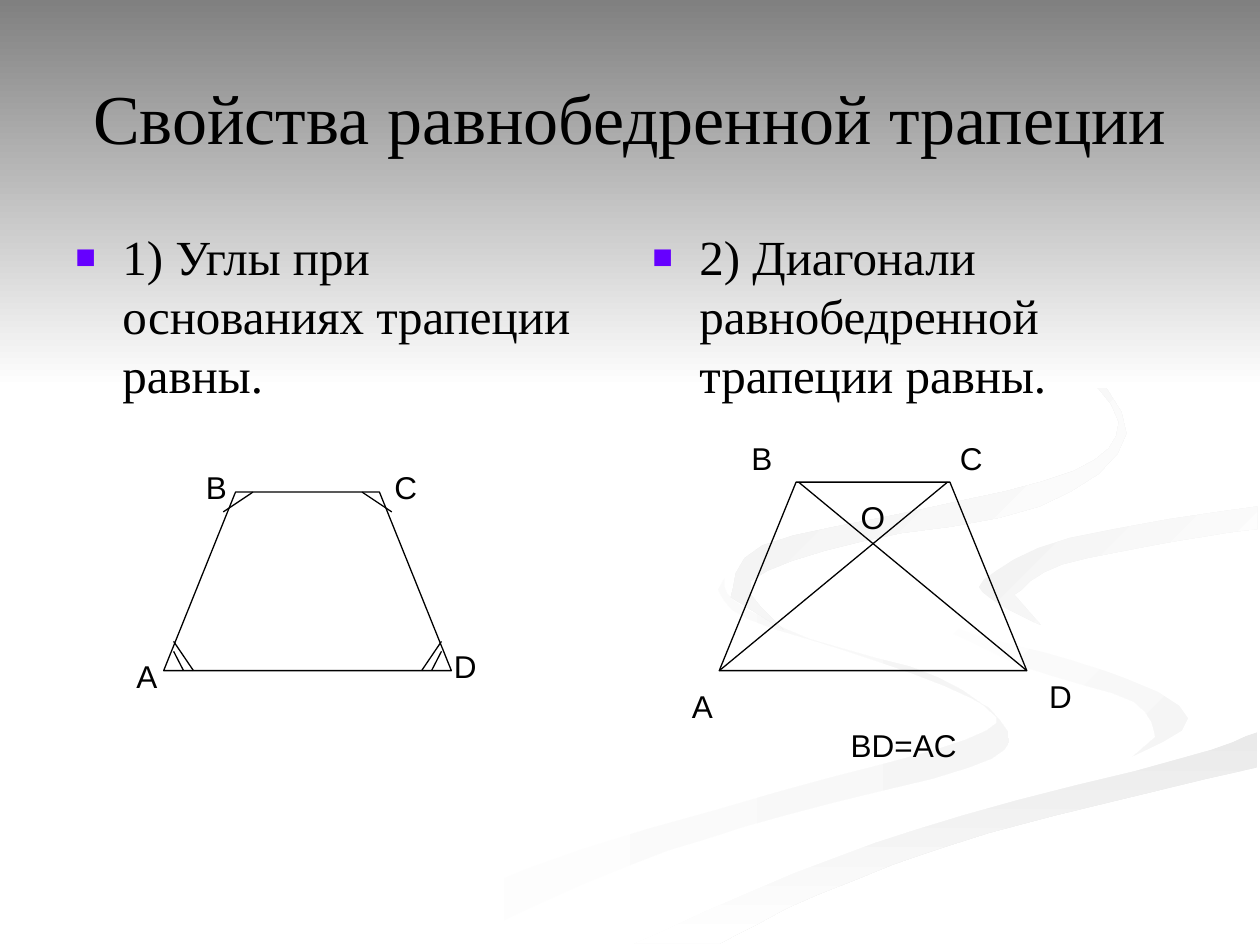
from lxml import etree
from pptx import Presentation
from pptx import util as u
from pptx.dml.color import RGBColor
from pptx.enum import shapes, text
from pptx.oxml.ns import qn

Cm, Pt = u.Cm, u.Pt
HUES = {"ink": "000000", "white": "FFFFFF", "mark": "6600FF", "top": "808080",
        "pale": "F5F5F5", "mist": "EAEAEA", "fog": "F1F1F1", "haze": "EDEDED"}
RGB = {name: RGBColor.from_string(code) for name, code in HUES.items()}
STEPS = 4

deck = Presentation()
deck.slide_width, deck.slide_height = Cm(25.4), Cm(19.05)
slide = deck.slides.add_slide(deck.slide_layouts[5])
items = slide.shapes


def write(frame, words, size, font, gap):
    frame.word_wrap = True
    frame.text = words
    para = frame.paragraphs[0]
    para.space_before = Pt(gap)
    face = para.runs[0].font
    face.size, face.name = Pt(size), font
    face.color.rgb = RGB["ink"]
    return para


def bend(dots):
    """Return points on a smooth curve through the dots."""
    ends = [dots[0], *dots, dots[-1]]
    curve = []
    for a, b, c, d in zip(ends, ends[1:], ends[2:], ends[3:]):
        for t in (step / STEPS for step in range(STEPS)):
            curve.append(tuple(
                q + t * (r - p) / 2 + t**2 * (2 * p - 5 * q + 4 * r - s) / 2
                + t**3 * (3 * q - p - 3 * r + s) / 2
                for p, q, r, s in zip(a, b, c, d)))
    return curve + [dots[-1]]


# Background ribbons: first hue, last hue, clockwise angle, edges in 1/100 inch
crest = [(503, 749), (630, 693), (764, 647), (936, 602), (998, 581)]
fills = [
    ("white", "pale", 0, [
        [(575, 459), (583, 477), (642, 507), (745, 538), (800, 581),
         (769, 609), (623, 647), (499, 687), (361, 749)],
        [(300, 749), (417, 690), (616, 629), (767, 587), (785, 562),
         (697, 525), (593, 491), (570, 468)]]),
    ("white", "pale", 45, [
        [(724, 464), (758, 498), (850, 524), (930, 553), (941, 581), (894, 605)],
        [(917, 585), (900, 557), (815, 530), (739, 494)]]),
    ("mist", "white", 90, [
        crest, [(998, 609), (785, 661), (649, 710), (571, 749)]]),
    ("white", "white", 0, [
        [(725, 464), (759, 498), (871, 530), (943, 570), (869, 611),
         (663, 668), (477, 749)],
        crest,
        [(998, 538), (866, 509), (781, 463), (850, 427), (998, 402)],
        [(998, 387), (788, 422), (727, 454)]]),
    ("fog", "white", 45, [
        [(998, 402), (849, 427), (781, 460), (791, 478), (826, 496)],
        [(805, 472), (843, 448), (936, 429), (998, 420)]]),
    ("haze", "white", 45, [
        [(762, 233), (843, 275), (894, 344), (825, 402), (683, 430),
         (596, 461), (622, 500)],
        [(580, 474), (605, 433), (733, 404), (852, 374), (888, 335), (846, 279)]]),
    ("top", "white", 90, [[(0, 0), (1000, 0)], [(1000, 308), (0, 308)]]),
]
for first, last, angle, edges in fills:
    dots = [dot for edge in edges for dot in bend(edge)]
    path = items.build_freeform(*dots[0], scale=Cm(0.0254))
    path.add_line_segments(dots[1:], close=True)
    shape = path.convert_to_shape()
    shape.shadow.inherit = False
    shape.line.fill.background()
    shape.fill.gradient()
    shape.fill.gradient_angle = -angle % 360
    for stop, hue in zip(shape.fill.gradient_stops, (first, last)):
        stop.color.rgb = RGB[hue]

# Title, raised above the background
title = items.title
items.element.append(title.element)
title.left, title.top, title.width, title.height = Cm(1.27), Cm(0.76), Cm(22.86), Cm(3.18)
title.text_frame.vertical_anchor = text.MSO_ANCHOR.MIDDLE
para = write(title.text_frame, "Свойства равнобедренной трапеции", 40, "Times New Roman", 0)
para.alignment = text.PP_ALIGN.CENTER

# Bulleted statements
for left, words in [(1.27, "1) Углы при основаниях трапеции равны."),
                    (12.9, "2) Диагонали равнобедренной трапеции равны.")]:
    box = items.add_textbox(Cm(left), Cm(4.45), Cm(11.23), Cm(12.57))
    para = write(box.text_frame, words, 28, "Times New Roman", 3)
    props = para._p.get_or_add_pPr()
    props.set("marL", str(Cm(0.95)))
    props.set("indent", str(-Cm(0.95)))
    tint = etree.SubElement(props, qn("a:buClr"))
    etree.SubElement(tint, qn("a:srgbClr"), val=HUES["mark"])
    etree.SubElement(props, qn("a:buSzPct"), val="70000")
    etree.SubElement(props, qn("a:buFont"), typeface="Arial")
    etree.SubElement(props, qn("a:buChar"), char="■")

# Trapezoids with the left half of their lines, which is mirrored;
# the top side is half the base
marks = [(3.5, 12.93, 3.9, 13.52), (3.5, 13.13, 3.7, 13.52), (5.1, 9.92, 4.5, 10.32)]
diagonal = [(16.1, 9.72, 20.7, 13.52)]
for left, top, width, height, lines in [(3.3, 9.92, 5.8, 3.6, marks),
                                        (14.5, 9.72, 6.2, 3.8, diagonal)]:
    trap = items.add_shape(shapes.MSO_SHAPE.TRAPEZOID, Cm(left), Cm(top), Cm(width), Cm(height))
    trap.adjustments[0] = width / 4 / height
    trap.shadow.inherit = False
    trap.fill.background()
    trap.line.color.rgb = RGB["ink"]
    trap.line.width = Pt(0.75)
    both = 2 * left + width
    for ends in lines + [(both - a, b, both - c, d) for a, b, c, d in lines]:
        line = items.add_connector(shapes.MSO_CONNECTOR.STRAIGHT, *map(Cm, ends))
        line.line.color.rgb = RGB["ink"]
        line.line.width = Pt(0.75)
        etree.SubElement(line.element.spPr, qn("a:effectLst"))

# Vertex names and the conclusion
for words, left, top, width in [
        ("C", 7.7, 9.32, 1.2), ("B", 3.9, 9.32, 1), ("A", 2.5, 13.12, 0.8),
        ("D", 8.9, 12.92, 1), ("D", 20.9, 13.52, 1), ("C", 19.1, 8.73, 1.2),
        ("B", 14.9, 8.73, 1), ("A", 13.7, 13.72, 0.8), ("O", 17.1, 9.92, 1.2),
        ("BD=AC", 16.9, 14.52, 6.8)]:
    box = items.add_textbox(Cm(left), Cm(top), Cm(width), Cm(1.02))
    write(box.text_frame, words, 18, "Arial", 2)

deck.save("out.pptx")
